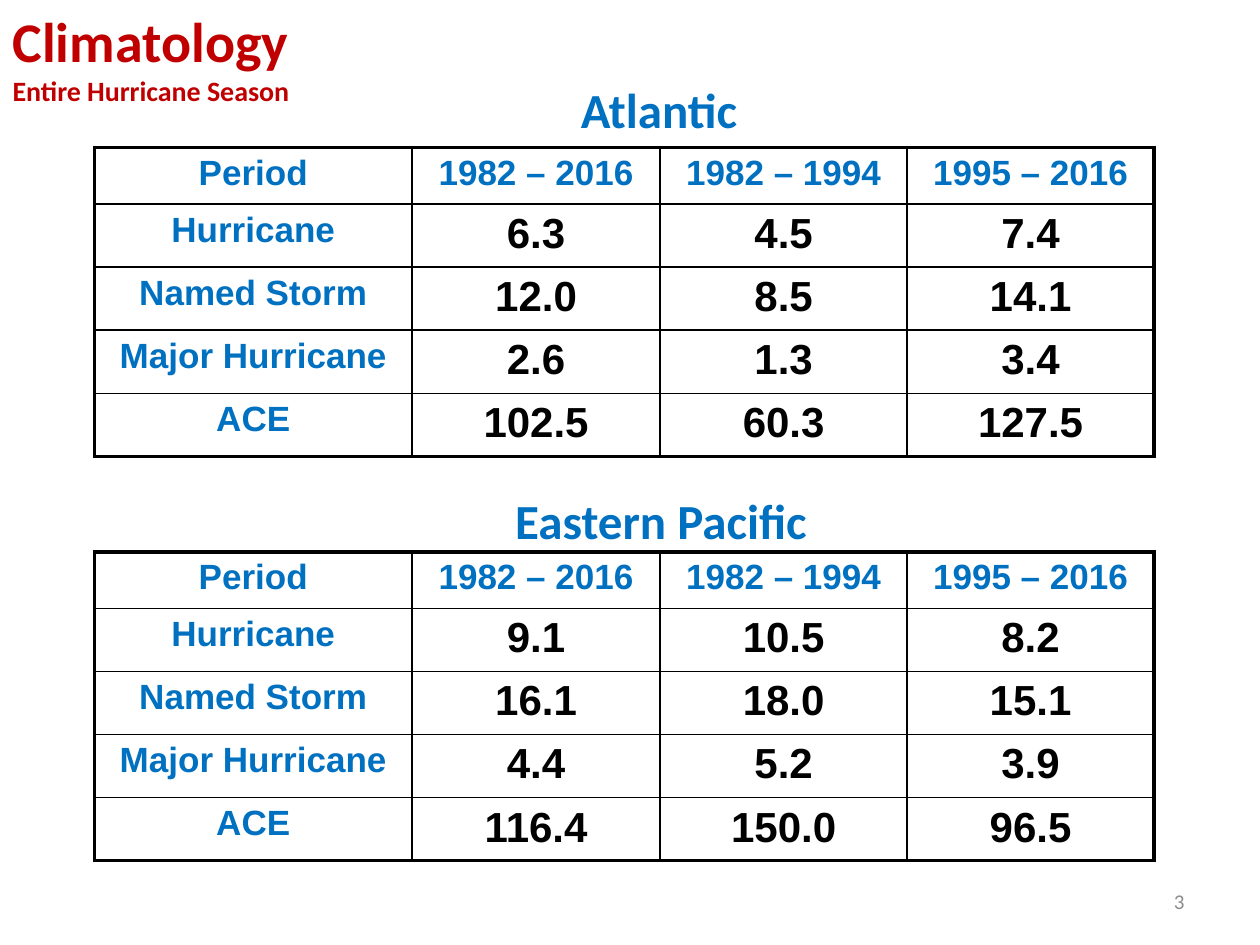
import lxml.etree
import pptx
import pptx.dml.color
import pptx.enum.text
import pptx.oxml.ns
import pptx.util

COLORS = {"red": "C00000", "blue": "0070C0", "black": "000000", "gray": "8C8C8C"}
ALIGN = pptx.enum.text.PP_ALIGN
ANCHOR = pptx.enum.text.MSO_ANCHOR
qn = pptx.oxml.ns.qn
Inches = pptx.util.Inches

prs = pptx.Presentation()
prs.slide_width, prs.slide_height = Inches(10), Inches(7.5)
s = prs.slides.add_slide(prs.slide_layouts[5])


def add_run(p, text, size, color, font="Calibri", bold=True, align=ALIGN.CENTER):
    p.alignment = align
    r = p.add_run()
    r.text = text
    r.font.size = pptx.util.Pt(size)
    r.font.name = font
    r.font.bold = bold
    r.font.color.rgb = pptx.dml.color.RGBColor.from_string(COLORS[color])


def add_border(cell, side, width):
    tc_pr = cell._tc.get_or_add_tcPr()
    ln = lxml.etree.SubElement(tc_pr, qn("a:" + side), w=str(pptx.util.Pt(width)))
    fill = lxml.etree.SubElement(ln, qn("a:solidFill"))
    lxml.etree.SubElement(fill, qn("a:srgbClr"), val=COLORS["black"])


# Title with its subtitle line
title = s.shapes.title
title.left, title.top, title.width, title.height = 0, 0, Inches(2.78), Inches(0.9)
tf = title.text_frame
tf.word_wrap = False
tf.auto_size = pptx.enum.text.MSO_AUTO_SIZE.NONE
tf.vertical_anchor = ANCHOR.TOP
add_run(tf.paragraphs[0], "Climatology", 32, "red", align=ALIGN.LEFT)
add_run(tf.add_paragraph(), "Entire Hurricane Season", 16, "red", align=ALIGN.LEFT)

# One heading and one table per basin
header = ["Period", "1982 – 2016", "1982 – 1994", "1995 – 2016"]
col_widths = [2.52, 1.97, 1.96, 1.96]
row_heights = [0.45] + [0.5] * 4
basins = [
    ("Atlantic", (4.5, 0.58, 1.46), 1.17, [
        ["Hurricane", "6.3", "4.5", "7.4"],
        ["Named Storm", "12.0", "8.5", "14.1"],
        ["Major Hurricane", "2.6", "1.3", "3.4"],
        ["ACE", "102.5", "60.3", "127.5"],
    ]),
    ("Eastern Pacific", (3.97, 3.84, 2.55), 4.38, [
        ["Hurricane", "9.1", "10.5", "8.2"],
        ["Named Storm", "16.1", "18.0", "15.1"],
        ["Major Hurricane", "4.4", "5.2", "3.9"],
        ["ACE", "116.4", "150.0", "96.5"],
    ]),
]
for name, (left, top, width), table_top, body in basins:
    sp = s.shapes.add_textbox(Inches(left), Inches(top), Inches(width), Inches(0.57))
    sp.text_frame.word_wrap = False
    add_run(sp.text_frame.paragraphs[0], name, 28, "blue")

    rows = [header] + body
    last_row, last_col = len(rows) - 1, len(header) - 1
    table = s.shapes.add_table(len(rows), len(header), Inches(0.75), Inches(table_top),
                               Inches(sum(col_widths)), Inches(sum(row_heights))).table
    table.first_row = table.horz_banding = False
    for col, col_width in zip(table.columns, col_widths):
        col.width = Inches(col_width)
    for i, values in enumerate(rows):
        table.rows[i].height = Inches(row_heights[i])
        for j, value in enumerate(values):
            cell = table.cell(i, j)
            label = i == 0 or j == 0
            p = cell.text_frame.paragraphs[0]
            add_run(p, value, 20 if label else 24, "blue" if label else "black", "Arial")
            # Space before is a share of the text size
            space = lxml.etree.SubElement(p._p.get_or_add_pPr(), qn("a:spcBef"))
            lxml.etree.SubElement(space, qn("a:spcPct"), val="20000")
            # Thick outer frame, thin inner rules
            outer = {"lnL": j == 0, "lnR": j == last_col, "lnT": i == 0, "lnB": i == last_row}
            for side, is_outer in outer.items():
                add_border(cell, side, 2.25 if is_outer else 1)
            cell.fill.background()

# Slide number
sp = s.shapes.add_textbox(Inches(7.17), Inches(6.95), Inches(2.33), Inches(0.4))
sp.text_frame.word_wrap = True
sp.text_frame.vertical_anchor = ANCHOR.MIDDLE
add_run(sp.text_frame.paragraphs[0], "3", 12, "gray", bold=False, align=ALIGN.RIGHT)

prs.save("out.pptx")
